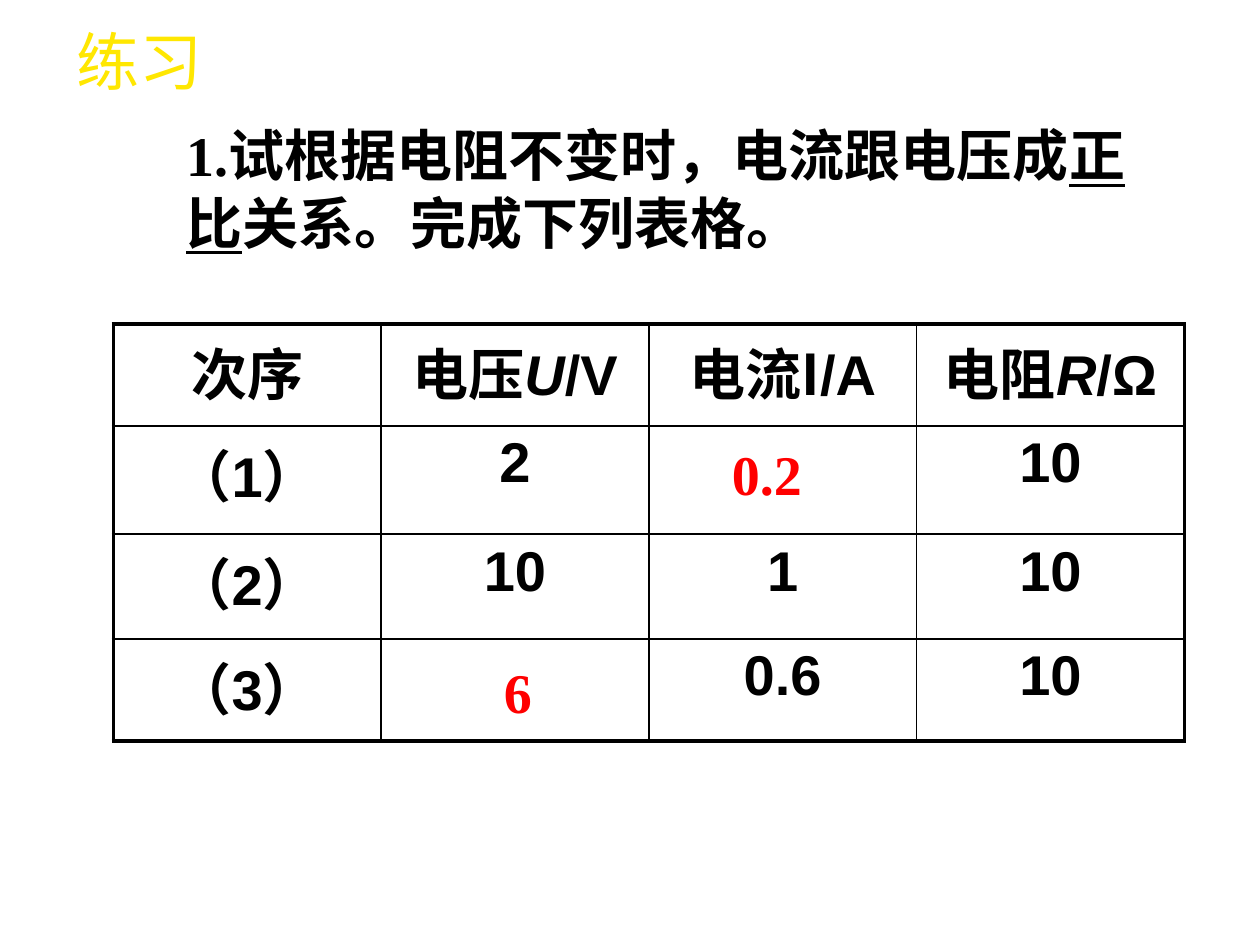
from pptx import Presentation
from pptx.dml.color import RGBColor
from pptx.enum.text import MSO_ANCHOR, PP_ALIGN
from pptx.oxml import parse_xml
from pptx.oxml.ns import nsdecls
from pptx.util import Inches, Pt

BLACK = RGBColor(0, 0, 0)
RED = RGBColor(255, 0, 0)
YELLOW = RGBColor(255, 231, 1)
SANS, SERIF, HAN = "Arial", "Times New Roman", "Noto Sans CJK SC"
COLS, ROWS = 100, 75  # grid of the slide
THIN, THICK = 1, 2.25


class Sheet:
    size = 32

    def __init__(self, deck):
        self.deck = deck
        self.slide = deck.slides.add_slide(deck.slide_layouts[5])

    def grid(self, x, y, w, h):
        """Turn columns and rows of the grid into lengths."""
        dx, dy = self.deck.slide_width / COLS, self.deck.slide_height / ROWS
        return [int(n) for n in (x * dx, y * dy, w * dx, h * dy)]

    def put(self, para, runs, face, color=BLACK, size=size, bold=True):
        """Fill a paragraph; each run is text, or text with a style mark."""
        for item in runs:
            text, mark = (item, "") if isinstance(item, str) else item
            run = para.add_run()
            run.text = text
            font = run.font
            font.size, font.bold, font.color.rgb = Pt(size), bold, color
            font.name = HAN if mark == "han" else face
            font.italic, font.underline = mark == "italic", mark == "under"
            # East Asian letters take their own font
            run._r.get_or_add_rPr().find("{*}latin").addnext(
                parse_xml(f'<a:ea {nsdecls("a")} typeface="{HAN}"/>'))

    def title(self, text, *box):
        shape = self.slide.shapes.title
        shape.left, shape.top, shape.width, shape.height = self.grid(*box)
        frame = shape.text_frame
        frame.word_wrap, frame.vertical_anchor = False, MSO_ANCHOR.TOP
        para = frame.paragraphs[0]
        para.alignment = PP_ALIGN.CENTER
        self.put(para, [text], HAN, YELLOW, 36, False)

    def text(self, runs, *box, color=BLACK, wrap=True):
        frame = self.slide.shapes.add_textbox(*self.grid(*box)).text_frame
        frame.word_wrap = wrap
        self.put(frame.paragraphs[0], runs, SERIF, color)

    def edge(self, cell, side, width):
        cell._tc.get_or_add_tcPr().append(parse_xml(
            f'<a:ln{side} {nsdecls("a")} w="{int(Pt(width))}"><a:solidFill>'
            f'<a:srgbClr val="{BLACK}"/></a:solidFill></a:ln{side}>'))

    def table(self, data, heights, *box):
        rows, cols = len(data), len(data[0])
        table = self.slide.shapes.add_table(rows, cols, *self.grid(*box)).table
        table.first_row = table.horz_banding = False
        for row, high in zip(table.rows, heights):
            row.height = Inches(high)
        for r, line in enumerate(data):
            for c, runs in enumerate(line):
                cell = table.cell(r, c)
                # Thick frame outside, thin lines inside
                outer = {"L": c == 0, "R": c == cols - 1,
                         "T": r == 0, "B": r == rows - 1}
                for side, rim in outer.items():
                    self.edge(cell, side, THICK if rim else THIN)
                cell.fill.background()
                para = cell.text_frame.paragraphs[0]
                para.alignment = PP_ALIGN.CENTER
                self.put(para, runs, SANS)


deck = Presentation()
deck.slide_width, deck.slide_height = Inches(10), Inches(7.5)
sheet = Sheet(deck)

# Heading and question
sheet.title("练习", 0.4, 1.3, 21.3, 10.2)
sheet.text(["1.试根据电阻不变时，电流跟电压成", ("正比", "under"),
            "关系。完成下列表格。"], 13.8, 9.1, 80, 11.7)

# Readings, with two cells left open
sheet.table([
    [["次序"], ["电压", ("U", "italic"), "/V"],
     ["电流", ("I", "han"), "/A"], ["电阻", ("R", "italic"), "/Ω"]],
    [["（1）"], ["2"], [], ["10"]],
    [["（2）"], ["10"], ["1"], ["10"]],
    [["（3）"], [], ["0.6"], ["10"]],
], [0.81, 0.86, 0.83, 0.81], 9, 25.7, 85, 33.1)

# Answers
sheet.text(["0.2"], 57.1, 34.4, 7.9, 6.3, color=RED)
sheet.text(["6"], 39, 51.7, 4.2, 6.3, color=RED, wrap=False)

deck.save("out.pptx")
